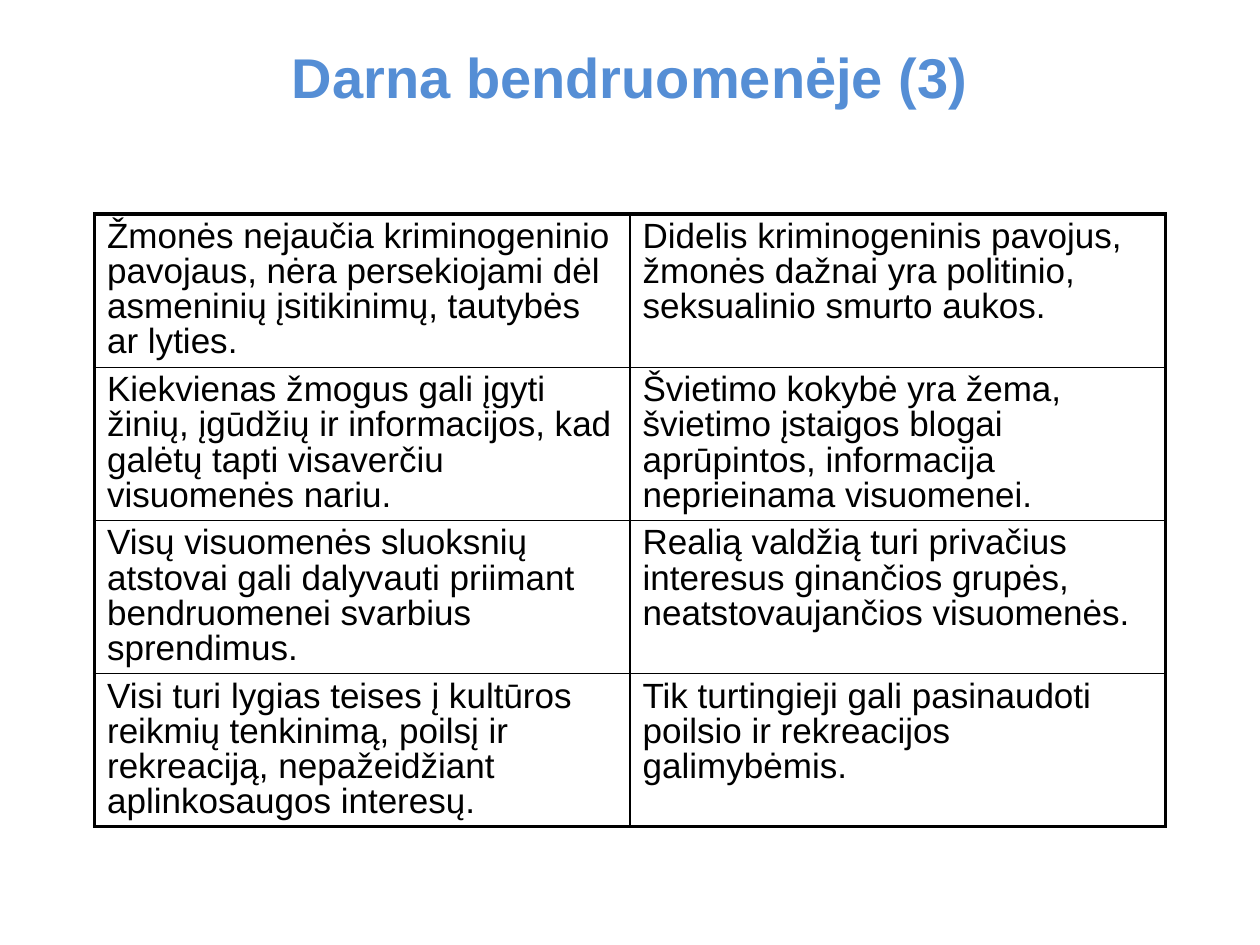
"""Build a slide contrasting harmony and disharmony in a community."""
from dataclasses import dataclass

import pptx
import pptx.dml.color
import pptx.enum.text
import pptx.oxml
import pptx.oxml.ns
import pptx.util
from pptx.util import Inches


@dataclass(frozen=True)
class Theme:
    heading: str = "558ED5"
    ink: str = "000000"
    font: str = "Arial"
    heading_size: float = 32
    body_size: float = 20
    outer_line: float = 2.25
    inner_line: float = 1


@dataclass(frozen=True)
class Contrast:
    harmony: str
    disharmony: str


THEME = Theme()
CONTRASTS = [
    Contrast(
        "Žmonės nejaučia kriminogeninio pavojaus, nėra persekiojami dėl asmeninių įsitikinimų, tautybės ar lyties.",
        "Didelis kriminogeninis pavojus, žmonės dažnai yra politinio, seksualinio smurto aukos.",
    ),
    Contrast(
        "Kiekvienas žmogus gali įgyti žinių, įgūdžių ir informacijos, kad galėtų tapti visaverčiu visuomenės nariu.",
        "Švietimo kokybė yra žema, švietimo įstaigos blogai aprūpintos, informacija neprieinama visuomenei.",
    ),
    Contrast(
        "Visų visuomenės sluoksnių atstovai gali dalyvauti priimant bendruomenei svarbius sprendimus.",
        "Realią valdžią turi privačius interesus ginančios grupės, neatstovaujančios visuomenės.",
    ),
    Contrast(
        "Visi turi lygias teises į kultūros reikmių tenkinimą, poilsį ir rekreaciją, nepažeidžiant aplinkosaugos interesų.",
        "Tik turtingieji gali pasinaudoti poilsio ir rekreacijos galimybėmis.",
    ),
]


def apply(target, formats: dict) -> None:
    for attribute, value in formats.items():
        setattr(target, attribute, value)


def style_font(font, size: float, colour: str, bold: bool) -> None:
    apply(font, {"name": THEME.font, "size": pptx.util.Pt(size), "bold": bold})
    font.color.rgb = pptx.dml.color.RGBColor.from_string(colour)


def add_border(cell, side: str, points: float) -> None:
    cell._tc.get_or_add_tcPr().append(pptx.oxml.parse_xml(
        f'<a:ln{side} {pptx.oxml.ns.nsdecls("a")} w="{pptx.util.Pt(points)}">'
        f'<a:solidFill><a:srgbClr val="{THEME.ink}"/></a:solidFill></a:ln{side}>'
    ))


def fill_cell(cell, text: str, outer_sides: dict[str, bool]) -> None:
    cell.text = text
    apply(cell, {
        "margin_left": Inches(0.1), "margin_right": Inches(0.1),
        "margin_top": Inches(0.05), "margin_bottom": Inches(0.05),
        "vertical_anchor": pptx.enum.text.MSO_ANCHOR.TOP,
    })
    for side, outer in outer_sides.items():
        add_border(cell, side, THEME.outer_line if outer else THEME.inner_line)
    cell.fill.background()
    paragraph = cell.text_frame.paragraphs[0]
    paragraph.line_spacing = 0.9
    style_font(paragraph.runs[0].font, THEME.body_size, THEME.ink, False)


def add_heading(slide, text: str) -> None:
    heading = slide.shapes.title
    apply(heading, {
        "left": Inches(0.75), "top": Inches(0.21),
        "width": Inches(8.5), "height": Inches(0.79),
    })
    heading.text_frame.text = text
    heading.text_frame.vertical_anchor = pptx.enum.text.MSO_ANCHOR.MIDDLE
    paragraph = heading.text_frame.paragraphs[0]
    paragraph.alignment = pptx.enum.text.PP_ALIGN.CENTER
    style_font(paragraph.runs[0].font, THEME.heading_size, THEME.heading, True)


def add_contrasts(slide, contrasts: list[Contrast]) -> None:
    last = len(contrasts) - 1
    grid = slide.shapes.add_table(
        len(contrasts), 2, Inches(0.75), Inches(1.7),
        Inches(8.5), Inches(1.215 * len(contrasts)),
    ).table
    apply(grid, {"first_row": False, "horz_banding": False})
    for row, contrast in enumerate(contrasts):
        for column, text in enumerate((contrast.harmony, contrast.disharmony)):
            outer_sides = {"L": column == 0, "R": column == 1, "T": row == 0, "B": row == last}
            fill_cell(grid.cell(row, column), text, outer_sides)


def main() -> None:
    presentation = pptx.Presentation()
    apply(presentation, {"slide_width": Inches(10), "slide_height": Inches(7.5)})
    slide = presentation.slides.add_slide(presentation.slide_layouts.get_by_name("Title Only"))
    add_heading(slide, "Darna bendruomenėje (3)")
    add_contrasts(slide, CONTRASTS)
    presentation.save("out.pptx")


if __name__ == "__main__":
    main()
